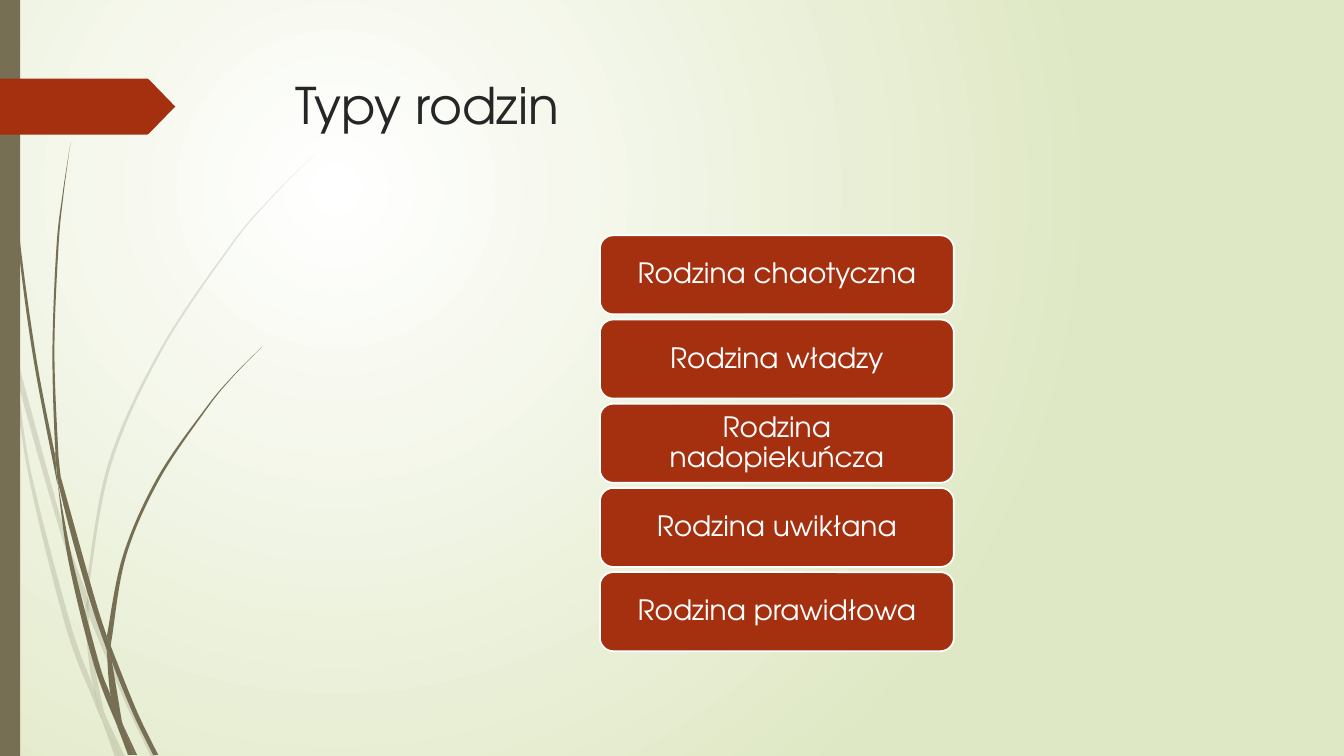
from lxml import etree
from pptx import Presentation, util as u
from pptx.dml.color import RGBColor
from pptx.enum import shapes, text
from pptx.oxml.ns import qn

W, H = 13.33, 7.5
FONT = "TeX Gyre Adventor"
COLORS = {"glow": "FFFFFF", "meadow": "DFE8C4", "stem": "766F54",
          "rust": "A53010", "ink": "262626", "white": "FFFFFF"}
FAMILY_TYPES = ["Rodzina chaotyczna", "Rodzina władzy", "Rodzina nadopiekuńcza",
                "Rodzina uwikłana", "Rodzina prawidłowa"]

GRASS_COLS, GRASS_ROWS = 312, 750
PALE_BLADES = [
    ([(11, 350), (9, 322), (0, 282)], [(0, 299), (10, 344)]),
    ([(14, 345), (17, 376), (58, 522), (84, 599)], [(85, 586), (62, 520), (14, 345)]),
    ([(88, 596), (88, 610), (123, 694), (150, 751)], [(155, 751), (127, 692), (92, 607)]),
    ([(119, 751), (124, 751)], [(105, 711)]),
    ([(11, 350), (28, 470), (65, 621), (92, 693), (101, 714)],
     [(99, 707), (93, 683), (70, 619), (31, 469), (17, 376), (11, 350)]),
    ([(84, 599), (87, 646), (93, 683), (105, 711)], [(103, 706), (91, 646), (88, 610)]),
    ([(312, 153), (268, 197), (228, 244), (158, 348), (107, 461), (85, 584)],
     [(88, 596), (88, 584), (110, 462), (160, 349), (229, 245), (268, 198), (312, 153)]),
    ([(101, 714), (114, 751)], [(119, 751)]),
    ([(88, 608), (88, 596)], [(85, 586), (84, 599)]),
    ([(93, 683), (99, 707), (101, 714), (119, 751)], [(105, 711), (96, 692)]),
]
DARK_BLADES = [
    ([(3, 0), (7, 110), (17, 233), (33, 355), (57, 481)],
     [(55, 453), (36, 355), (19, 232), (8, 109), (4, 0)]),
    ([(60, 472), (64, 505), (88, 592), (106, 645)], [(106, 631), (93, 590), (60, 472)]),
    ([(110, 641), (111, 656), (132, 708), (152, 749)], [(157, 749), (136, 706), (113, 649)]),
    ([(57, 477), (68, 557), (93, 659), (117, 722)],
     [(116, 717), (110, 691), (98, 657), (72, 556), (57, 477)]),
    ([(70, 141), (62, 193), (56, 245), (52, 349), (55, 449), (60, 472)],
     [(58, 453), (54, 349), (58, 245), (63, 193), (70, 141)]),
    ([(133, 749), (136, 749)], [(122, 719)]),
    ([(57, 477), (64, 505)], [(60, 472), (55, 449), (55, 453)]),
    ([(260, 344), (231, 373), (204, 405), (156, 474), (122, 551), (106, 631)],
     [(110, 641), (111, 633), (125, 552), (158, 476), (205, 406), (231, 374), (260, 344)]),
    ([(117, 722), (127, 749)], [(131, 749)]),
    ([(106, 645), (110, 691), (122, 719)], [(121, 716), (111, 656)]),
    ([(106, 645), (111, 656)], [(110, 641), (106, 631)]),
    ([(110, 691), (117, 722), (130, 749)], [(133, 749), (122, 719), (116, 706)]),
]


def rgb(name):
    return RGBColor.from_string(COLORS[name])


def share(x, y, w, h):
    return x * W / 100, y * H / 100, w * W / 100, h * H / 100


def paint(sp, fill, line=None):
    sp.shadow.inherit = False
    sp.fill.solid()
    sp.fill.fore_color.rgb = rgb(fill)
    if line:
        sp.line.color.rgb = rgb(line)
        sp.line.width = u.Pt(1.25)
    else:
        sp.line.fill.background()


def write(p, words, size, color):
    r = p.add_run()
    r.text = words
    r.font.name = FONT
    r.font.size = u.Pt(size)
    r.font.color.rgb = rgb(color)


def bend(sp, split):
    pts = [(int(e.get("x")), int(e.get("y"))) for e in sp.element.iter(qn("a:pt"))]
    for i, ln in enumerate(list(sp.element.iter(qn("a:lnTo")))):
        if i == split - 1:
            continue
        first, last = (0, split - 1) if i < split else (split, len(pts) - 1)
        before, after = pts[max(i - 1, first)], pts[min(i + 2, last)]
        a, b = pts[i], pts[i + 1]
        ln.tag = qn("a:cubicBezTo")
        controls = [[p + (n - m) / 6 for p, m, n in zip(a, before, b)],
                    [p - (n - m) / 6 for p, m, n in zip(b, a, after)]]
        for k, (x, y) in enumerate(controls):
            pt = etree.Element(qn("a:pt"), {"x": str(round(x)), "y": str(round(y))})
            ln.insert(k, pt)


def outline(parent, points, fill):
    pts = [(x * 1000, y * 1000) for x, y in points]
    fb = parent.build_freeform(*pts[0], scale=u.Inches(1) / 1000)
    fb.add_line_segments(pts[1:], close=True)
    sp = fb.convert_to_shape()
    paint(sp, fill)
    return sp


def background(s):
    fill = s.background.fill
    fill.gradient()
    for stop, name in zip(fill.gradient_stops, ("glow", "meadow")):
        stop.color.rgb = rgb(name)
    grad = next(s.element.iter(qn("a:gradFill")))
    grad.remove(grad.find(qn("a:lin")))
    circle = etree.SubElement(grad, qn("a:path"), {"path": "circle"})
    etree.SubElement(circle, qn("a:fillToRect"),
                     {"l": "50000", "t": "50000", "r": "100000", "b": "100000"})


def grass(s, box, blades, alpha=None):
    x, y, w, h = box
    group = s.shapes.add_group_shape()
    for left, right in blades:
        points = [(x + c * w / GRASS_COLS, y + r * h / GRASS_ROWS)
                  for c, r in left + right]
        sp = outline(group.shapes, points, "stem")
        bend(sp, len(left))
        if alpha:
            clr = next(sp.element.iter(qn("a:srgbClr")))
            etree.SubElement(clr, qn("a:alpha"), {"val": str(alpha * 1000)})


def side_band(s, box):
    sp = s.shapes.add_shape(shapes.MSO_SHAPE.RECTANGLE, *map(u.Inches, box))
    paint(sp, "stem")


def pointer(s, box):
    x, y, w, h = box
    profile = [(0, 0), (0.84, 0), (0.85, 0.02), (0.99, 0.47), (1, 0.5),
               (0.99, 0.53), (0.85, 0.98), (0.84, 1), (0, 1)]
    outline(s.shapes, [(x + a * w, y + b * h) for a, b in profile], "rust")


def title(s, box, words):
    sp = s.shapes.title
    sp.left, sp.top, sp.width, sp.height = map(u.Inches, box)
    tf = sp.text_frame
    tf.word_wrap = True
    tf.auto_size = text.MSO_AUTO_SIZE.NONE
    tf.vertical_anchor = text.MSO_ANCHOR.TOP
    p = tf.paragraphs[0]
    p.alignment = text.PP_ALIGN.LEFT
    write(p, words, 36, "ink")


def family_stack(s, box, names):
    x, y, w, h = box
    height = h * 0.19
    pitch = (h - height) / (len(names) - 1)
    for i, name in enumerate(names):
        sp = s.shapes.add_shape(shapes.MSO_SHAPE.ROUNDED_RECTANGLE,
                                *map(u.Inches, (x, y + i * pitch, w, height)))
        paint(sp, "rust", "white")
        tf = sp.text_frame
        tf.word_wrap = True
        tf.vertical_anchor = text.MSO_ANCHOR.MIDDLE
        tf.margin_left = tf.margin_right = u.Inches(0.08)
        tf.margin_top = tf.margin_bottom = u.Inches(0.04)
        p = tf.paragraphs[0]
        p.alignment = text.PP_ALIGN.CENTER
        p.line_spacing = 0.9
        write(p, name, 20, "white")


def main():
    prs = Presentation()
    prs.slide_width, prs.slide_height = u.Inches(W), u.Inches(H)
    s = prs.slides.add_slide(prs.slide_layouts[5])
    background(s)
    grass_box = share(0, 0, 23.4, 100)
    grass(s, grass_box, PALE_BLADES, alpha=20)
    grass(s, grass_box, DARK_BLADES)
    side_band(s, share(0, 0, 1.5, 100))
    pointer(s, share(0, 10.4, 13.05, 7.4))
    title(s, share(21.24, 9.07, 73.14, 18.67), "Typy rodzin")
    family_stack(s, share(44.64, 31.13, 26.33, 55), FAMILY_TYPES)
    prs.save("out.pptx")


if __name__ == "__main__":
    main()
